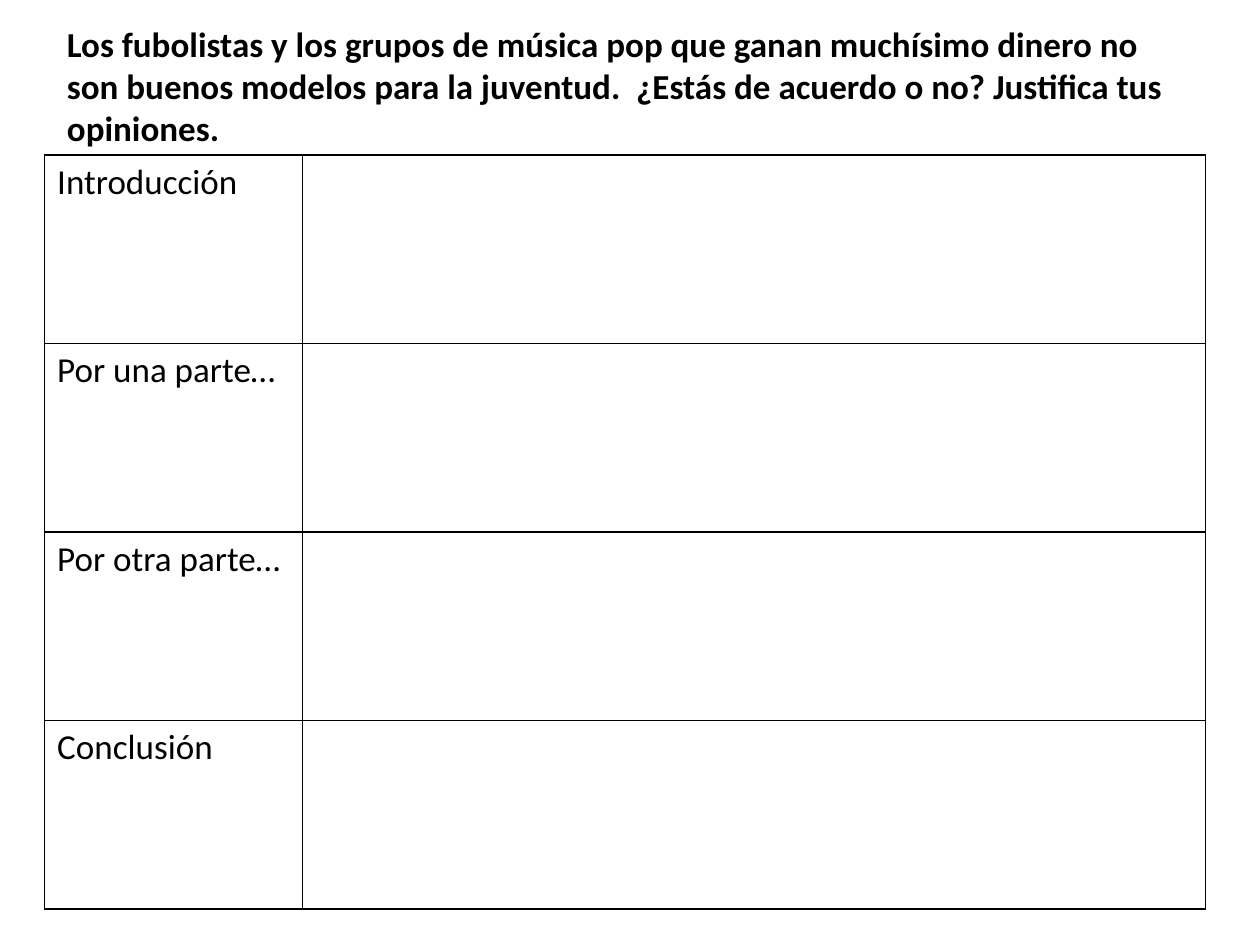
from dataclasses import dataclass

from lxml import etree
from pptx import Presentation
from pptx.dml.color import RGBColor
from pptx.enum.text import MSO_ANCHOR, MSO_AUTO_SIZE
from pptx.oxml.ns import qn
from pptx.util import Cm, Length, Pt

TOP = MSO_ANCHOR.TOP
GROW = MSO_AUTO_SIZE.SHAPE_TO_FIT_TEXT
BORDER_TAGS = ("a:lnL", "a:lnR", "a:lnT", "a:lnB")


@dataclass(frozen=True)
class Theme:
    font: str = "Calibri"
    size: Length = Pt(20)
    ink: str = "000000"
    border: Length = Pt(1)


@dataclass(frozen=True)
class Section:
    label: str
    answer: str = ""


THEME = Theme()
QUESTION = (
    "Los fubolistas y los grupos de música pop que ganan muchísimo dinero no "
    "son buenos modelos para la juventud.  ¿Estás de acuerdo o no? "
    "Justifica tus opiniones."
)
SECTIONS = [
    Section("Introducción"),
    Section("Por una parte…"),
    Section("Por otra parte…"),
    Section("Conclusión"),
]
COLUMN_WIDTHS = (Cm(5.2), Cm(18.2))
ROW_HEIGHT = Cm(3.8)


def write(tf, text: str, bold: bool = False) -> None:
    p = tf.paragraphs[0]
    font = p.font
    if text:
        r = p.add_run()
        r.text = text
        font = r.font
    formats = {"name": THEME.font, "size": THEME.size, "bold": bold}
    for name, value in formats.items():
        setattr(font, name, value)
    font.color.rgb = RGBColor.from_string(THEME.ink)


def draw_borders(cell) -> None:
    tc_pr = cell._tc.get_or_add_tcPr()
    for index, tag in enumerate(BORDER_TAGS):
        ln = etree.Element(qn(tag), w=str(THEME.border))
        fill = etree.SubElement(ln, qn("a:solidFill"))
        etree.SubElement(fill, qn("a:srgbClr"), val=THEME.ink)
        tc_pr.insert(index, ln)


def draw_question(s) -> None:
    tf = s.shapes.add_textbox(Cm(1.1), Cm(0.33), Cm(23.2), Cm(2.82)).text_frame
    for name, value in {"word_wrap": True, "auto_size": GROW}.items():
        setattr(tf, name, value)
    write(tf, QUESTION, bold=True)


def draw_plan(s, sections: list[Section]) -> None:
    table = s.shapes.add_table(
        len(sections), len(COLUMN_WIDTHS), Cm(0.9), Cm(3.12),
        sum(COLUMN_WIDTHS), ROW_HEIGHT * len(sections),
    ).table
    for name in ("first_row", "horz_banding"):
        setattr(table, name, False)
    for column, width in zip(table.columns, COLUMN_WIDTHS):
        column.width = width
    for row, section in zip(table.rows, sections):
        row.height = ROW_HEIGHT
        for cell, text in zip(row.cells, (section.label, section.answer)):
            cell.vertical_anchor = TOP
            cell.fill.background()
            draw_borders(cell)
            write(cell.text_frame, text)


def main() -> None:
    prs = Presentation()
    prs.slide_width, prs.slide_height = Cm(25.4), Cm(19.05)
    s = prs.slides.add_slide(prs.slide_layouts[6])

    # Essay question
    draw_question(s)

    # Planning grid, one row per part of the essay
    draw_plan(s, SECTIONS)

    prs.save("out.pptx")


if __name__ == "__main__":
    main()
